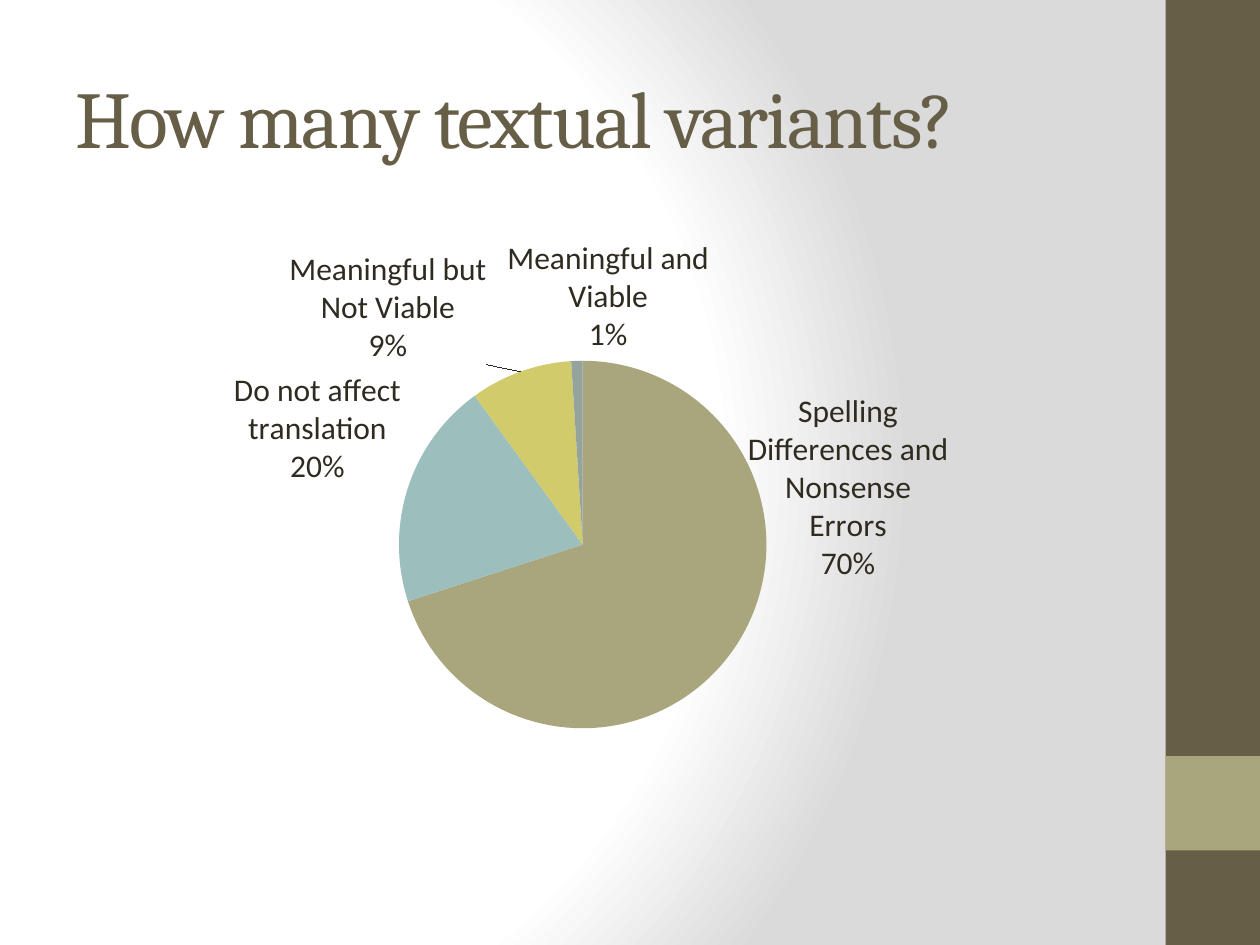
"""Build the textual variants slide with its pie chart."""
from pptx import Presentation
from pptx.chart.data import CategoryChartData
from pptx.dml.color import RGBColor
from pptx.enum.chart import XL_CHART_TYPE, XL_LABEL_POSITION
from pptx.enum.shapes import MSO_SHAPE
from pptx.enum.text import MSO_ANCHOR
from pptx.oxml import parse_xml
from pptx.oxml.ns import nsdecls
from pptx.util import Pt

TITLE = "How many textual variants?"
VARIANTS = [
    ("Spelling Differences and Nonsense Errors", 70, "khaki"),
    ("Do not affect translation", 20, "teal"),
    ("Meaningful but Not Viable", 9, "yellow"),
    ("Meaningful and Viable", 1, "grey"),
]
COLORS = {
    "brown": "675E47", "khaki": "A9A57C", "teal": "9CBEBD", "yellow": "D2CB6C",
    "grey": "95A39D", "ink": "2F2B20", "white": "FFFFFF", "shade": "DADADA",
}
BACKGROUND = [(0, "white"), (75, "white"), (100, "shade")]
WIDTH, HEIGHT, BAND = 720, 540, 54
MARGIN, CONTENT_WIDTH = 36, 600
PIE_AREA = {"x": 0.32, "y": 0.21, "w": 0.35, "h": 0.56}
SPELLING_SHIFT = {"x": 0.01, "y": -0.4}


def color(name):
    return RGBColor.from_string(COLORS[name])


def paint_background(slide):
    slide.background.fill.gradient()
    stops = "".join(
        f'<a:gs pos="{percent * 1000}"><a:srgbClr val="{COLORS[name]}"/></a:gs>'
        for percent, name in BACKGROUND
    )
    gradient = slide.element.xpath(".//p:bgPr/a:gradFill")[0]
    gradient.getparent().replace(gradient, parse_xml(
        f'<a:gradFill rotWithShape="1" {nsdecls("a")}><a:gsLst>{stops}</a:gsLst>'
        '<a:path path="circle"><a:fillToRect l="20000" t="50000" r="100000" b="50000"/>'
        "</a:path></a:gradFill>"
    ))


def add_band(slide, top, height, fill):
    band = slide.shapes.add_shape(
        MSO_SHAPE.RECTANGLE, Pt(WIDTH - BAND), Pt(top), Pt(BAND), Pt(height))
    band.shadow.inherit = False
    band.fill.solid()
    band.fill.fore_color.rgb = color(fill)
    band.line.fill.background()


def add_title(slide):
    frame = slide.shapes.add_textbox(
        Pt(MARGIN), Pt(21.6), Pt(CONTENT_WIDTH), Pt(90)).text_frame
    frame.word_wrap = True
    frame.vertical_anchor = MSO_ANCHOR.MIDDLE
    title = frame.paragraphs[0]
    run = title.add_run()
    run.text = TITLE
    title.font.size = Pt(46)
    title.font.name = "Cambria"
    title.font.color.rgb = color("brown")
    run.font.size = Pt(46)
    run.font._element.set("spc", "-100")


def set_layout(parent, index, values, modes=""):
    for layout in parent.xpath("c:layout"):
        parent.remove(layout)
    places = "".join(f'<c:{key} val="{value}"/>' for key, value in values.items())
    parent.insert(index, parse_xml(
        f'<c:layout {nsdecls("c")}><c:manualLayout>{modes}{places}'
        "</c:manualLayout></c:layout>"))


def add_pie(slide):
    data = CategoryChartData()
    data.categories = [label for label, _, _ in VARIANTS]
    data.add_series("Series 1", [share for _, share, _ in VARIANTS])
    chart = slide.shapes.add_chart(
        XL_CHART_TYPE.PIE, Pt(MARGIN), Pt(126), Pt(CONTENT_WIDTH), Pt(378), data).chart
    chart.has_title = False
    chart.has_legend = False
    chart.font.size = Pt(18)
    chart.font.name = "Calibri"
    chart.font.color.rgb = color("ink")
    chart.plots[0].vary_by_categories = True

    series = chart.plots[0].series[0]
    for index, (_, _, fill) in enumerate(VARIANTS):
        slice_fill = series.points[index].format.fill
        slice_fill.solid()
        slice_fill.fore_color.rgb = color(fill)

    labels = series.data_labels
    labels.position = XL_LABEL_POSITION.BEST_FIT
    series.points[0].data_label.position = XL_LABEL_POSITION.BEST_FIT
    space = chart.element
    for tag, shown in (("showVal", 0), ("showCatName", 1), ("showPercent", 1)):
        for switch in space.xpath(f".//c:ser//c:{tag}"):
            switch.set("val", str(shown))
    for last in space.xpath(".//c:ser//c:showBubbleSize"):
        last.addnext(parse_xml(f'<c:separator {nsdecls("c")}>\n</c:separator>'))
    set_layout(space.xpath(".//c:dLbl")[0], 1, SPELLING_SHIFT)
    set_layout(
        space.xpath(".//c:plotArea")[0], 0, PIE_AREA,
        '<c:layoutTarget val="inner"/><c:xMode val="edge"/><c:yMode val="edge"/>')


def main():
    deck = Presentation()
    deck.slide_width, deck.slide_height = Pt(WIDTH), Pt(HEIGHT)
    slide = deck.slides.add_slide(deck.slide_layouts[6])
    paint_background(slide)
    add_band(slide, 0, HEIGHT, "brown")
    add_band(slide, 432, BAND, "khaki")
    add_title(slide)
    add_pie(slide)
    deck.save("out.pptx")


if __name__ == "__main__":
    main()
